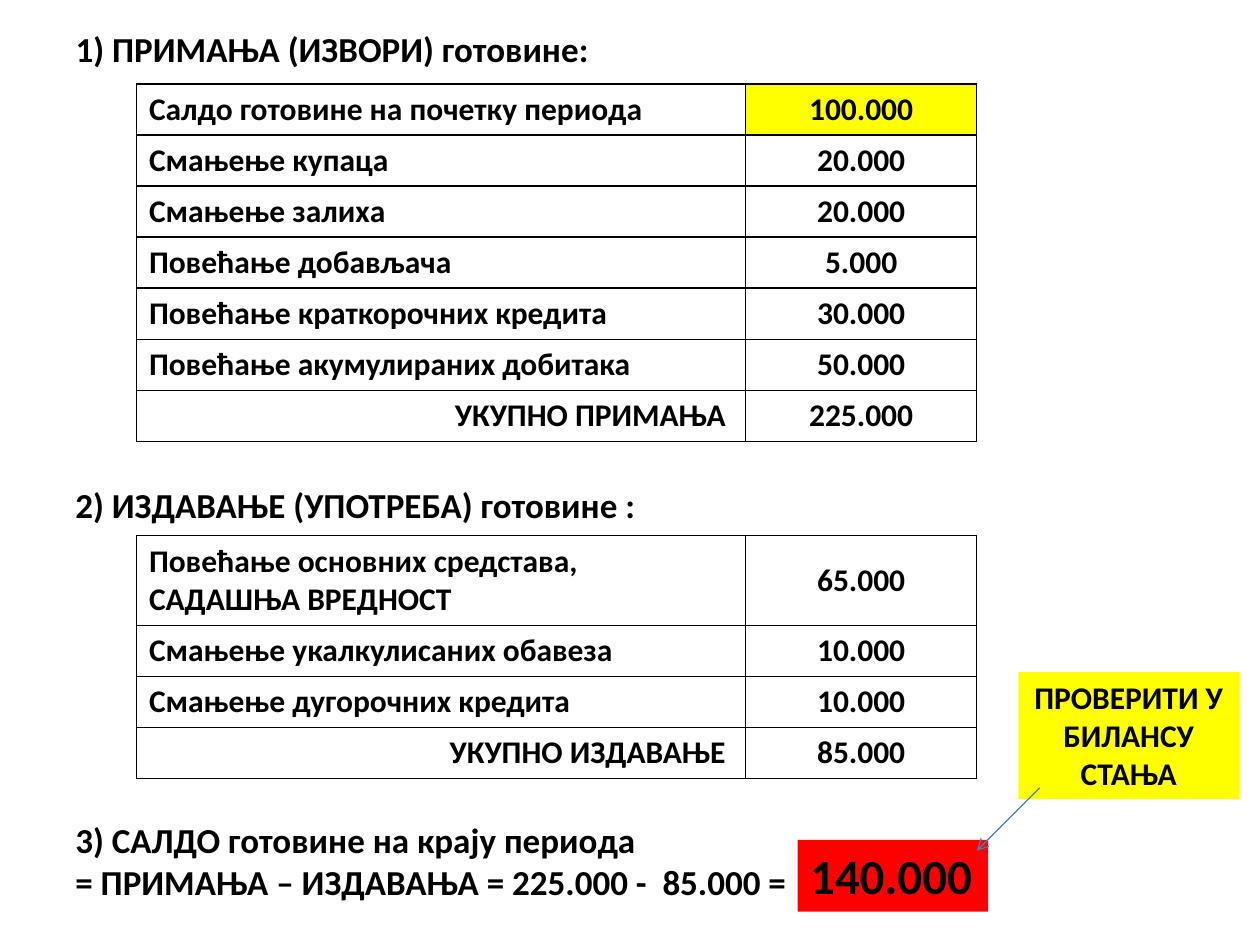
"""Builds the cash flow slide with receipts, payments and the closing balance."""
from lxml import etree
from pptx import Presentation
from pptx.dml.color import RGBColor
from pptx.enum.shapes import MSO_CONNECTOR, MSO_SHAPE
from pptx.enum.text import MSO_ANCHOR, MSO_AUTO_SIZE, PP_ALIGN
from pptx.oxml.ns import qn
from pptx.util import Cm, Pt

LEFT, CENTER, RIGHT = PP_ALIGN.LEFT, PP_ALIGN.CENTER, PP_ALIGN.RIGHT
TOP, MIDDLE = MSO_ANCHOR.TOP, MSO_ANCHOR.MIDDLE
NO_FIT = MSO_AUTO_SIZE.NONE
RECT, STRAIGHT = MSO_SHAPE.RECTANGLE, MSO_CONNECTOR.STRAIGHT

FONT = "Calibri"
COLORS = {"text": "000000", "mark": "FFFF00", "result": "FF0000", "arrow": "4B7EBC"}
COLUMNS = (12.28, 4.66)
ROW = 1.03
TABLE_LEFT = 2.75

RECEIPTS = [
    ("Салдо готовине на почетку периода", "100.000"),
    ("Смањење купаца", "20.000"),
    ("Смањење залиха", "20.000"),
    ("Повећање добављача", "5.000"),
    ("Повећање краткорочних кредита", "30.000"),
    ("Повећање акумулираних добитака", "50.000"),
    ("УКУПНО ПРИМАЊА ", "225.000"),
]
PAYMENTS = [
    ("Повећање основних средстава, САДАШЊА ВРЕДНОСТ", "65.000"),
    ("Смањење укалкулисаних обавеза", "10.000"),
    ("Смањење дугорочних кредита", "10.000"),
    ("УКУПНО ИЗДАВАЊЕ ", "85.000"),
]


def color(name):
    return RGBColor.from_string(COLORS[name])


class Deck:
    """Holds the style and the current slide."""

    def __init__(self, prs):
        self.s = prs.slides.add_slide(prs.slide_layouts[5])

    def set_text(self, tf, text, size, align=LEFT):
        tf.text = text
        for p in tf.paragraphs:
            p.alignment = align
            for r in p.runs:
                r.font.name, r.font.size, r.font.bold = FONT, Pt(size), True
                r.font.color.rgb = color("text")

    def heading(self, sp, text, y, height=1.1):
        sp.left, sp.top, sp.width, sp.height = Cm(1.27), Cm(y), Cm(22.86), Cm(height)
        tf = sp.text_frame
        tf.word_wrap, tf.auto_size, tf.vertical_anchor = True, NO_FIT, TOP
        self.set_text(tf, text, 20)

    def title(self, text, y):
        self.heading(self.s.shapes.title, text, y)

    def section(self, text, y, height=1.1):
        self.heading(self.s.shapes.add_textbox(0, 0, 0, 0), text, y, height)

    def borders(self, cell):
        tc_pr = cell._tc.get_or_add_tcPr()
        for side in ("a:lnL", "a:lnR", "a:lnT", "a:lnB"):
            ln = etree.SubElement(tc_pr, qn(side), w=str(Pt(1)))
            fill = etree.SubElement(ln, qn("a:solidFill"))
            etree.SubElement(fill, qn("a:srgbClr"), val=COLORS["text"])

    def table(self, rows, y, first_row=ROW, anchor=TOP):
        heights = [first_row] + [ROW] * (len(rows) - 1)
        table = self.s.shapes.add_table(
            len(rows), len(COLUMNS), Cm(TABLE_LEFT), Cm(y), Cm(sum(COLUMNS)), Cm(sum(heights))
        ).table
        table.first_row = table.horz_banding = False
        for column, width in zip(table.columns, COLUMNS):
            column.width = Cm(width)
        for i, (label, amount) in enumerate(rows):
            table.rows[i].height = Cm(heights[i])
            label_align = RIGHT if i == len(rows) - 1 else LEFT
            for j, (text, align) in enumerate([(label, label_align), (amount, CENTER)]):
                cell = table.cell(i, j)
                self.set_text(cell.text_frame, text, 18, align)
                self.borders(cell)
                cell.fill.background()
            cell.vertical_anchor = anchor
        return table

    def box(self, text, x, y, width, height, fill, size, align=CENTER, wrap=True):
        sp = self.s.shapes.add_shape(RECT, Cm(x), Cm(y), Cm(width), Cm(height))
        sp.shadow.inherit = False
        sp.fill.solid()
        sp.fill.fore_color.rgb = color(fill)
        sp.line.fill.background()
        tf = sp.text_frame
        tf.word_wrap, tf.vertical_anchor = wrap, TOP
        self.set_text(tf, text, size, align)

    def arrow(self, x1, y1, x2, y2):
        c = self.s.shapes.add_connector(STRAIGHT, Cm(x1), Cm(y1), Cm(x2), Cm(y2))
        c.line.color.rgb = color("arrow")
        c.line.width = Pt(0.75)
        etree.SubElement(c.line._get_or_add_ln(), qn("a:tailEnd"), type="arrow")
        etree.SubElement(c._element.spPr, qn("a:effectLst"))


def main():
    prs = Presentation()
    prs.slide_width, prs.slide_height = Cm(25.4), Cm(19.05)
    deck = Deck(prs)

    deck.title("1) ПРИМАЊА (ИЗВОРИ) готовине:", 0.43)
    receipts = deck.table(RECEIPTS, 1.69)
    opening = receipts.cell(0, 1)
    opening.fill.solid()
    opening.fill.fore_color.rgb = color("mark")

    deck.section("2) ИЗДАВАЊЕ (УПОТРЕБА) готовине :", 9.63)
    deck.table(PAYMENTS, 10.8, first_row=1.78, anchor=MIDDLE)

    deck.section(
        "3) САЛДО готовине на крају периода\n= ПРИМАЊА – ИЗДАВАЊА = 225.000 -  85.000 =", 16.38, 1.97
    )
    deck.box("140.000", 16.08, 16.93, 3.84, 1.45, "result", 28, LEFT, wrap=False)
    deck.box("ПРОВЕРИТИ У БИЛАНСУ СТАЊА", 20.53, 13.55, 4.45, 2.56, "mark", 18)
    deck.arrow(20.96, 15.88, 19.69, 17.15)

    prs.save("out.pptx")


if __name__ == "__main__":
    main()
